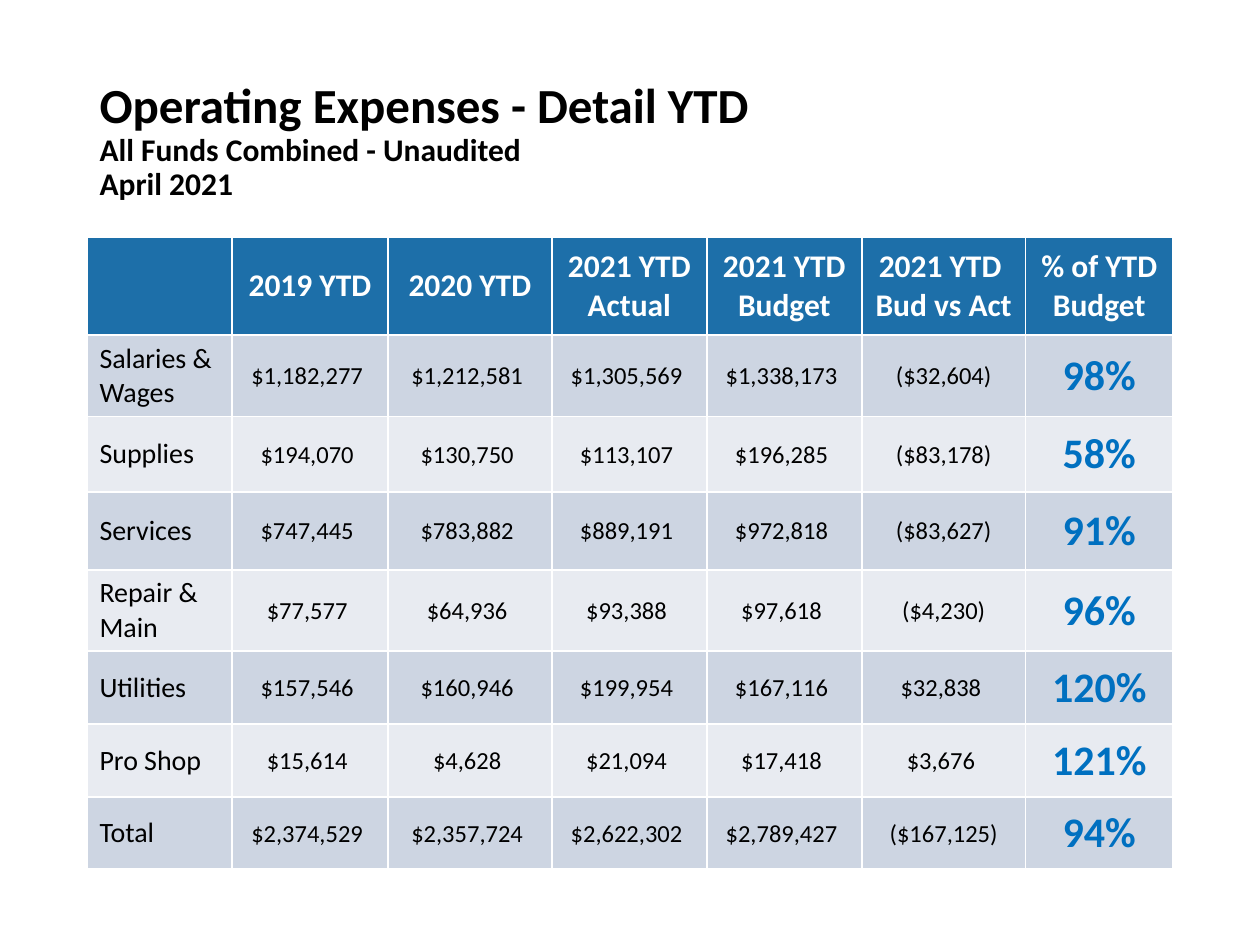
import pptx
import pptx.dml.color
import pptx.enum.text
import pptx.util

Inches = pptx.util.Inches
Pt = pptx.util.Pt
ALIGN = pptx.enum.text.PP_ALIGN
MIDDLE = pptx.enum.text.MSO_ANCHOR.MIDDLE

COLORS = {
    "ink": "000000",
    "header": "1D6FA9",
    "header_text": "FFFFFF",
    "band_dark": "CDD5E2",
    "band_light": "E8EBF1",
    "percent": "0070C0",
}

TITLE_LINES = [
    ("Operating Expenses - Detail YTD", 28),
    ("All Funds Combined - Unaudited", 18),
    ("April 2021", 18),
]
HEADERS = ["", "2019 YTD", "2020 YTD", "2021 YTD Actual", "2021 YTD Budget",
           "2021 YTD \nBud vs Act", "% of YTD\nBudget"]
# Category, 2019, 2020, 2021 actual, 2021 budget, budget vs actual, percent
EXPENSES = [
    ("Salaries & Wages", 1182277, 1212581, 1305569, 1338173, -32604, 98),
    ("Supplies", 194070, 130750, 113107, 196285, -83178, 58),
    ("Services", 747445, 783882, 889191, 972818, -83627, 91),
    ("Repair & Main", 77577, 64936, 93388, 97618, -4230, 96),
    ("Utilities", 157546, 160946, 199954, 167116, 32838, 120),
    ("Pro Shop", 15614, 4628, 21094, 17418, 3676, 121),
    ("Total", 2374529, 2357724, 2622302, 2789427, -167125, 94),
]
COLUMN_WIDTHS = [1.15, 1.24, 1.3, 1.23, 1.23, 1.3, 1.17]
ROW_HEIGHTS = [0.78, 0.56, 0.6, 0.62, 0.58, 0.58, 0.58, 0.57]


def add_text(para, text, size=14, color="ink", bold=False, font="Calibri"):
    span = para.add_run()
    span.text = text
    span.font.name = font
    span.font.size = Pt(size)
    span.font.bold = bold
    span.font.color.rgb = pptx.dml.color.RGBColor.from_string(COLORS[color])


def accounting(amount):
    """Negative amounts go in brackets; others leave room for the bracket."""
    return f"(${-amount:,})" if amount < 0 else f"${amount:,} "


class ReportSlide:
    def __init__(self, deck):
        self.page = deck.slides.add_slide(deck.slide_layouts[5])
        self.left = Inches(0.69)
        self.width = Inches(8.62)

    def title(self, lines, top, height):
        box = self.page.shapes.title
        box.left, box.top = self.left, Inches(top)
        box.width, box.height = self.width, Inches(height)
        frame = box.text_frame
        frame.auto_size = pptx.enum.text.MSO_AUTO_SIZE.NONE
        frame.vertical_anchor = MIDDLE
        para = frame.paragraphs[0]
        para.alignment = ALIGN.LEFT
        para.line_spacing = 0.9
        for index, (text, size) in enumerate(lines):
            if index:
                para.add_line_break()
            add_text(para, text, size=size, bold=True)

    def table(self, top, widths, heights):
        frame = self.page.shapes.add_table(
            len(heights), len(widths), self.left, Inches(top),
            self.width, Inches(sum(heights)))
        for column, width in zip(frame.table.columns, widths):
            column.width = Inches(width)
        for row, height in zip(frame.table.rows, heights):
            row.height = Inches(height)
        return frame.table

    def cell(self, cell, text, fill, align=ALIGN.CENTER, tight=False, **style):
        cell.fill.solid()
        cell.fill.fore_color.rgb = pptx.dml.color.RGBColor.from_string(COLORS[fill])
        cell.vertical_anchor = MIDDLE
        if tight:
            cell.margin_left = cell.margin_top = cell.margin_right = Inches(0.01)
            cell.margin_bottom = 0
        frame = cell.text_frame
        for index, line in enumerate(text.split("\n") if text else []):
            para = frame.add_paragraph() if index else frame.paragraphs[0]
            para.alignment = align
            add_text(para, line, **style)


def main():
    deck = pptx.Presentation()
    deck.slide_width, deck.slide_height = Inches(10), Inches(7.5)
    report = ReportSlide(deck)
    report.title(TITLE_LINES, top=0.4, height=1.45)
    table = report.table(1.88, COLUMN_WIDTHS, ROW_HEIGHTS)

    for column, header in enumerate(HEADERS):
        report.cell(table.cell(0, column), header, "header",
                    size=18, color="header_text", bold=True)

    for row, (category, *amounts, percent) in enumerate(EXPENSES, start=1):
        band = "band_dark" if row % 2 else "band_light"
        report.cell(table.cell(row, 0), category, band, align=ALIGN.LEFT, size=16)
        for column, amount in enumerate(amounts, start=1):
            report.cell(table.cell(row, column), accounting(amount), band, tight=True)
        report.cell(table.cell(row, len(HEADERS) - 1), f"{percent}%", band,
                    tight=True, size=24, color="percent", bold=True)

    deck.save("out.pptx")


if __name__ == "__main__":
    main()
